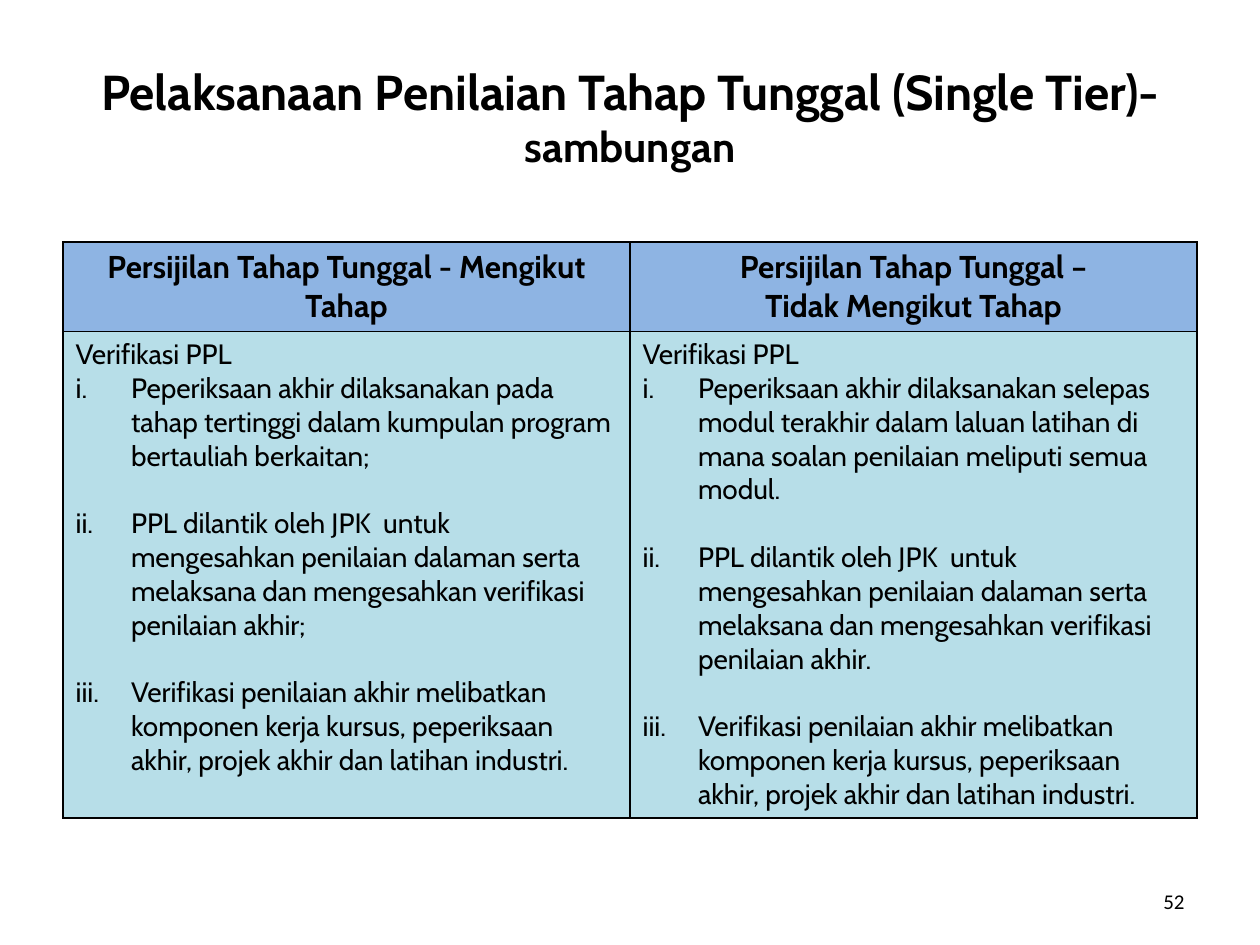
from lxml import etree
from pptx import Presentation
from pptx import util as u
from pptx.dml.color import RGBColor
from pptx.enum import text
from pptx.oxml import ns

FONT = "Cabin"
BLACK, HEADER_FILL, BODY_FILL = "000000", "8EB4E3", "B7DEE8"
INDENT = u.Inches(0.44)
ITEM_GAP = u.Pt(19.3)  # one line of 16 pt text

VERIFICATION = "Verifikasi PPL"
APPOINTMENT = ("PPL dilantik oleh JPK  untuk mengesahkan penilaian dalaman serta "
               "melaksana dan mengesahkan verifikasi penilaian akhir")
COMPONENTS = ("Verifikasi penilaian akhir melibatkan komponen kerja kursus, "
              "peperiksaan akhir, projek akhir dan latihan industri.")
COLUMNS = [
    (["Persijilan Tahap Tunggal - Mengikut Tahap"],
     ["Peperiksaan akhir dilaksanakan pada tahap tertinggi dalam kumpulan "
      "program bertauliah berkaitan;",
      APPOINTMENT + ";", COMPONENTS]),
    (["Persijilan Tahap Tunggal –", "Tidak Mengikut Tahap"],
     ["Peperiksaan akhir dilaksanakan selepas modul terakhir dalam laluan "
      "latihan di mana soalan penilaian meliputi semua modul.",
      APPOINTMENT + ".", COMPONENTS]),
]


def rgb(value):
    return RGBColor.from_string(value)


def add_run(paragraph, words, size, bold=False, font=FONT):
    run = paragraph.add_run()
    run.text = words
    run.font.name = font
    run.font.size = u.Pt(size)
    run.font.bold = bold
    run.font.color.rgb = rgb(BLACK)


def add_paragraphs(frame, count):
    """Return count paragraphs, the first being the one already in the frame."""
    return [frame.paragraphs[0]] + [frame.add_paragraph() for _ in range(count - 1)]


def number_roman(paragraph):
    properties = paragraph._p.get_or_add_pPr()
    properties.set("marL", str(INDENT))
    properties.set("indent", str(-INDENT))
    numbering = etree.SubElement(properties, ns.qn("a:buAutoNum"))
    numbering.set("type", "romanLcPeriod")


def style_cell(cell, fill):
    properties = cell._tc.get_or_add_tcPr()
    for side in ("lnL", "lnR", "lnT", "lnB"):
        border = etree.SubElement(properties, ns.qn("a:" + side), w=str(u.Pt(1)))
        solid = etree.SubElement(border, ns.qn("a:solidFill"))
        etree.SubElement(solid, ns.qn("a:srgbClr"), val=BLACK)
    cell.fill.solid()
    cell.fill.fore_color.rgb = rgb(fill)


def fill_header(cell, lines):
    style_cell(cell, HEADER_FILL)
    for paragraph, line in zip(add_paragraphs(cell.text_frame, len(lines)), lines):
        paragraph.alignment = text.PP_ALIGN.CENTER
        add_run(paragraph, line, 18, bold=True)


def fill_body(cell, items):
    style_cell(cell, BODY_FILL)
    intro, *numbered = add_paragraphs(cell.text_frame, len(items) + 1)
    add_run(intro, VERIFICATION, 16)
    for position, (paragraph, item) in enumerate(zip(numbered, items)):
        if position:
            paragraph.space_before = ITEM_GAP
        number_roman(paragraph)
        add_run(paragraph, item, 16)


def place_title(slide, left, top, width, height):
    title = slide.shapes.title
    title.left, title.top, title.width, title.height = left, top, width, height
    frame = title.text_frame
    frame.word_wrap = True
    frame.vertical_anchor = text.MSO_ANCHOR.MIDDLE
    heading = frame.paragraphs[0]
    heading.alignment = text.PP_ALIGN.CENTER
    add_run(heading, "Pelaksanaan Penilaian Tahap Tunggal (Single Tier)- ", 28, bold=True)
    add_run(heading, "sambungan", 24, bold=True)


def place_comparison(slide, left, top, width, height):
    table = slide.shapes.add_table(2, len(COLUMNS), left, top, width, height).table
    table.horz_banding = False
    header_height = u.Inches(0.71)
    table.rows[0].height = header_height
    table.rows[1].height = height - header_height
    for column, (header, items) in enumerate(COLUMNS):
        fill_header(table.cell(0, column), header)
        fill_body(table.cell(1, column), items)


def place_page_number(slide, left, top, width, height):
    frame = slide.shapes.add_textbox(left, top, width, height).text_frame
    frame.word_wrap = True
    frame.vertical_anchor = text.MSO_ANCHOR.MIDDLE
    number = frame.paragraphs[0]
    number.alignment = text.PP_ALIGN.RIGHT
    add_run(number, "52", 12, font="Calibri")


def main():
    deck = Presentation()
    deck.slide_width, deck.slide_height = u.Inches(10), u.Inches(7.5)
    slide = deck.slides.add_slide(deck.slide_layouts.get_by_name("Title Only"))
    margin, content_width = u.Inches(0.5), u.Inches(9)
    place_title(slide, margin, u.Inches(0.3), content_width, u.Inches(1.25))
    place_comparison(slide, margin, u.Inches(1.92), content_width, u.Inches(4.57))
    place_page_number(slide, u.Inches(7.17), u.Inches(6.95), u.Inches(2.33), u.Inches(0.4))
    deck.save("out.pptx")


if __name__ == "__main__":
    main()
